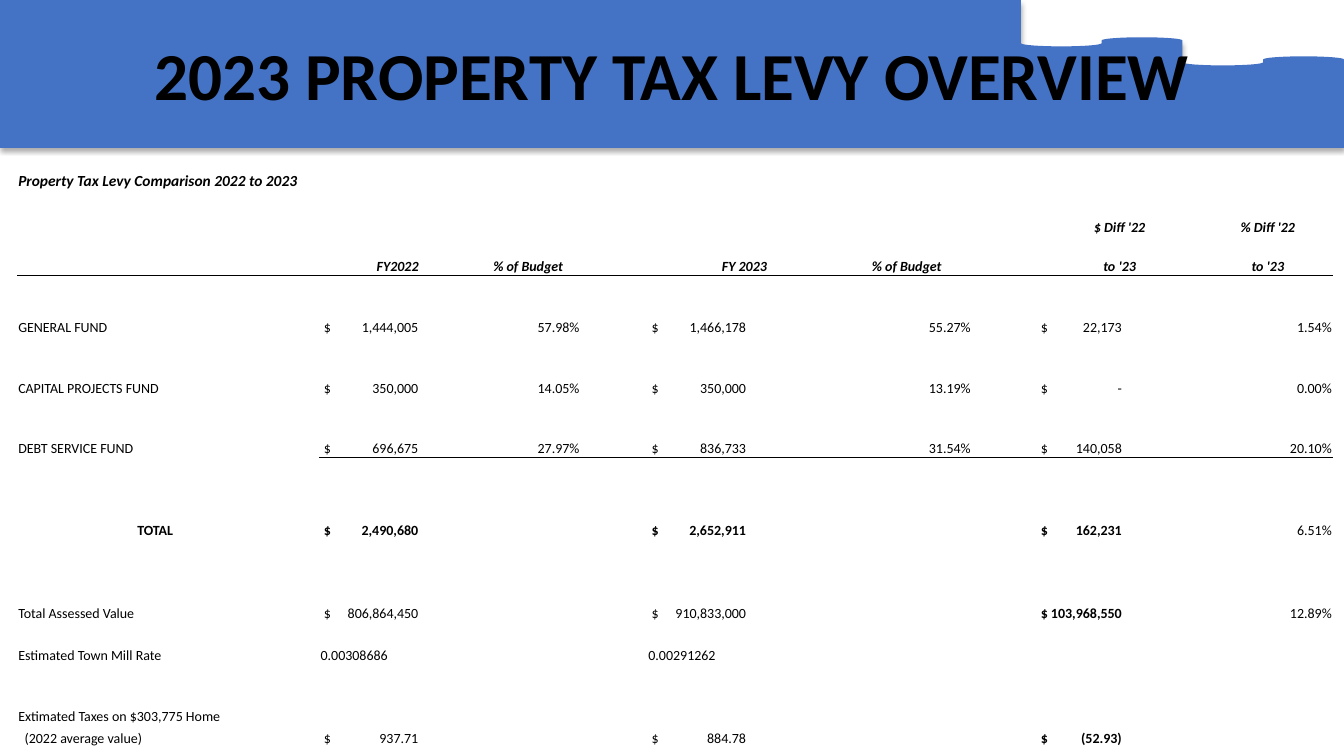
from math import cos, pi, sin

from lxml import etree
from pptx import Presentation
from pptx.dml.color import RGBColor
from pptx.enum.text import MSO_ANCHOR, PP_ALIGN
from pptx.oxml.ns import qn
from pptx.util import Cm, Pt

LEFT, CENTER, RIGHT = PP_ALIGN.LEFT, PP_ALIGN.CENTER, PP_ALIGN.RIGHT
MIDDLE, BOTTOM = MSO_ANCHOR.MIDDLE, MSO_ANCHOR.BOTTOM
BLACK = RGBColor(0x00, 0x00, 0x00)
WHITE = RGBColor(0xFF, 0xFF, 0xFF)
BLUE = RGBColor(0x44, 0x72, 0xC4)
FONT = "Calibri"
PLAIN_TABLE_STYLE = "{2D5ABB26-0587-4C30-8999-92F81FD0307C}"

TITLE = "2023 PROPERTY TAX LEVY OVERVIEW"
CAPTION = "Property Tax Levy Comparison 2022 to 2023"

# Table row -> label, FY2022, share, FY2023, share, difference, % difference
HEADINGS = {
    2: ("", "", "", "", "", "$ Diff '22", "% Diff '22"),
    3: ("", "FY2022", "% of Budget", "FY 2023", "% of Budget", "to '23", "to '23"),
}
LEVIES = {
    5: ("GENERAL FUND", "$1,444,005", "57.98%", "$1,466,178", "55.27%", "$22,173", "1.54%"),
    7: ("CAPITAL PROJECTS FUND", "$350,000", "14.05%", "$350,000", "13.19%", "$-", "0.00%"),
    9: ("DEBT SERVICE FUND", "$696,675", "27.97%", "$836,733", "31.54%", "$140,058", "20.10%"),
    12: ("TOTAL", "$2,490,680", "", "$2,652,911", "", "$162,231", "6.51%"),
    15: ("Total Assessed Value", "$806,864,450", "", "$910,833,000", "", "$103,968,550", "12.89%"),
    17: ("Estimated Town Mill Rate", "0.00308686", "", "0.00291262", "", "", ""),
    19: ("Extimated Taxes on $303,775 Home", "", "", "", "", "", ""),
    20: ("(2022 average value)", "$937.71", "", "$884.78", "", "$(52.93)", ""),
}
LABEL_INDENTS = {12: 3.0, 20: 0.16}
TOTAL_ROW, ASSESSED_ROW, TAXES_ROW = 12, 15, 20
DIFFERENCE_COLUMN = 7
CONTENT_COLUMNS = (0, 1, 2, 4, 5, 7, 8)
AMOUNT_ENDS = {1: 2.46, 4: 2.46, 7: 2.12}
RULED_FROM_COLUMN = {3: 0, 9: 1}

COLUMN_WIDTHS = (7.62, 3.94, 2.64, 1.68, 4.9, 3.28, 1.63, 4.19, 3.28)
ROW_COUNT = 21
TOP_ROWS, TALL_ROWS = (0, 1), (3, 5, 7, 9, 12, 15, 19)

SLIDE_WIDTH, SLIDE_HEIGHT, BANNER_HEIGHT = 33.87, 19.05, 3.73
WAVE_LEFT, WAVE_PITCH, WAVE_DROP, WAVE_DEPTH = 25.73, 4.07, 0.48, 0.08
TROUGH_TOP, CREST_BASE = 1.09, 1.02
ARC_STEPS = 16


def row_height(row):
    return 0.61 if row in TOP_ROWS else 0.99 if row in TALL_ROWS else 0.54


def arc(left, base, depth):
    """Points of a flat half ellipse, half a wave wide."""
    radius = WAVE_PITCH / 4
    angles = [pi * step / ARC_STEPS for step in range(ARC_STEPS + 1)]
    return [(left + radius * (1 - cos(a)), base + depth * sin(a)) for a in angles]


def add_banner(slide):
    outline = [(WAVE_LEFT, 0)]
    for wave in range(2):
        left, drop = WAVE_LEFT + wave * WAVE_PITCH, wave * WAVE_DROP
        outline += arc(left, TROUGH_TOP + drop, WAVE_DEPTH)
        outline += arc(left + WAVE_PITCH / 2, CREST_BASE + drop, -WAVE_DEPTH)
    outline += [(SLIDE_WIDTH, BANNER_HEIGHT), (0, BANNER_HEIGHT)]
    builder = slide.shapes.build_freeform(0, 0)
    builder.add_line_segments([(Cm(x), Cm(y)) for x, y in outline], close=True)
    banner = builder.convert_to_shape()
    banner.fill.solid()
    banner.fill.fore_color.rgb = BLUE
    banner.line.fill.background()
    banner.shadow.inherit = False
    effects = banner._element.spPr.find(qn("a:effectLst"))
    shadow = etree.SubElement(effects, qn("a:outerShdw"), blurRad=str(Pt(3.5)),
                              dist=str(Pt(2.2)), dir="5400000", rotWithShape="0")
    colour = etree.SubElement(shadow, qn("a:srgbClr"), val=str(BLACK))
    etree.SubElement(colour, qn("a:alpha"), val="32000")
    slide.shapes._spTree.insert(2, banner._element)  # behind the title


def add_run(paragraph, text, size, bold=False, italic=False):
    run = paragraph.add_run()
    run.text = text
    run.font.name, run.font.size = FONT, Pt(size)
    run.font.bold, run.font.italic = bold, italic
    run.font.color.rgb = BLACK


def add_title(slide):
    title = slide.shapes.title
    title.left, title.top = 0, 0
    title.width, title.height = Cm(SLIDE_WIDTH), Cm(BANNER_HEIGHT)
    title.text_frame.vertical_anchor = MIDDLE
    paragraph = title.text_frame.paragraphs[0]
    paragraph.alignment = CENTER
    add_run(paragraph, TITLE, 48, bold=True)


def clear_cell(cell):
    cell.fill.solid()
    cell.fill.fore_color.rgb = WHITE
    cell.vertical_anchor = BOTTOM
    cell.margin_left = cell.margin_right = cell.margin_top = Cm(0.03)
    cell.margin_bottom = 0


def rule_below(cell):
    line = etree.Element(qn("a:lnB"), w=str(Pt(1)))
    fill = etree.SubElement(line, qn("a:solidFill"))
    etree.SubElement(fill, qn("a:srgbClr"), val=str(BLACK))
    cell._tc.get_or_add_tcPr().insert(0, line)


def write_levy(paragraph, text, row, column):
    bold = (row == TOTAL_ROW and column != CONTENT_COLUMNS[-1]
            or row in (ASSESSED_ROW, TAXES_ROW) and column == DIFFERENCE_COLUMN)
    properties = paragraph._p.get_or_add_pPr()
    if column == 0:
        properties.set("marL", str(Cm(LABEL_INDENTS.get(row, 0))))
    elif text.startswith("$"):
        tabs = etree.SubElement(properties, qn("a:tabLst"))
        etree.SubElement(tabs, qn("a:tab"), pos=str(Cm(AMOUNT_ENDS[column])), algn="r")
        text = " $\t" + text[1:]
    paragraph.alignment = RIGHT if text.endswith("%") else LEFT
    add_run(paragraph, text, 10, bold=bold)


def add_levy_table(slide):
    heights = [row_height(row) for row in range(ROW_COUNT)]
    frame = slide.shapes.add_table(ROW_COUNT, len(COLUMN_WIDTHS), Cm(0.43), Cm(4.19),
                                   Cm(sum(COLUMN_WIDTHS)), Cm(sum(heights)))
    table = frame.table
    table.first_row = table.horz_banding = False
    table._tbl.tblPr.find(qn("a:tableStyleId")).text = PLAIN_TABLE_STYLE
    for column, width in zip(table.columns, COLUMN_WIDTHS):
        column.width = Cm(width)
    for row, height in zip(table.rows, heights):
        row.height = Cm(height)
    table.cell(0, 0).merge(table.cell(0, 2))

    for row in range(ROW_COUNT):
        texts = dict(zip(CONTENT_COLUMNS, HEADINGS.get(row) or LEVIES.get(row, ())))
        for column in range(len(COLUMN_WIDTHS)):
            cell = table.cell(row, column)
            clear_cell(cell)
            if column >= RULED_FROM_COLUMN.get(row, len(COLUMN_WIDTHS)):
                rule_below(cell)
            paragraph = cell.text_frame.paragraphs[0]
            text = texts.get(column)
            if (row, column) == (0, 0):
                add_run(paragraph, CAPTION, 11, bold=True, italic=True)
            elif not text:
                etree.SubElement(paragraph._p, qn("a:endParaRPr"), sz="1000")
            elif row in HEADINGS:
                paragraph.alignment = CENTER
                add_run(paragraph, text, 10, bold=True, italic=True)
            else:
                write_levy(paragraph, text, row, column)


def main():
    deck = Presentation()
    deck.slide_width, deck.slide_height = Cm(SLIDE_WIDTH), Cm(SLIDE_HEIGHT)
    slide = deck.slides.add_slide(deck.slide_layouts[5])
    add_banner(slide)
    add_title(slide)
    add_levy_table(slide)
    deck.save("out.pptx")


if __name__ == "__main__":
    main()
